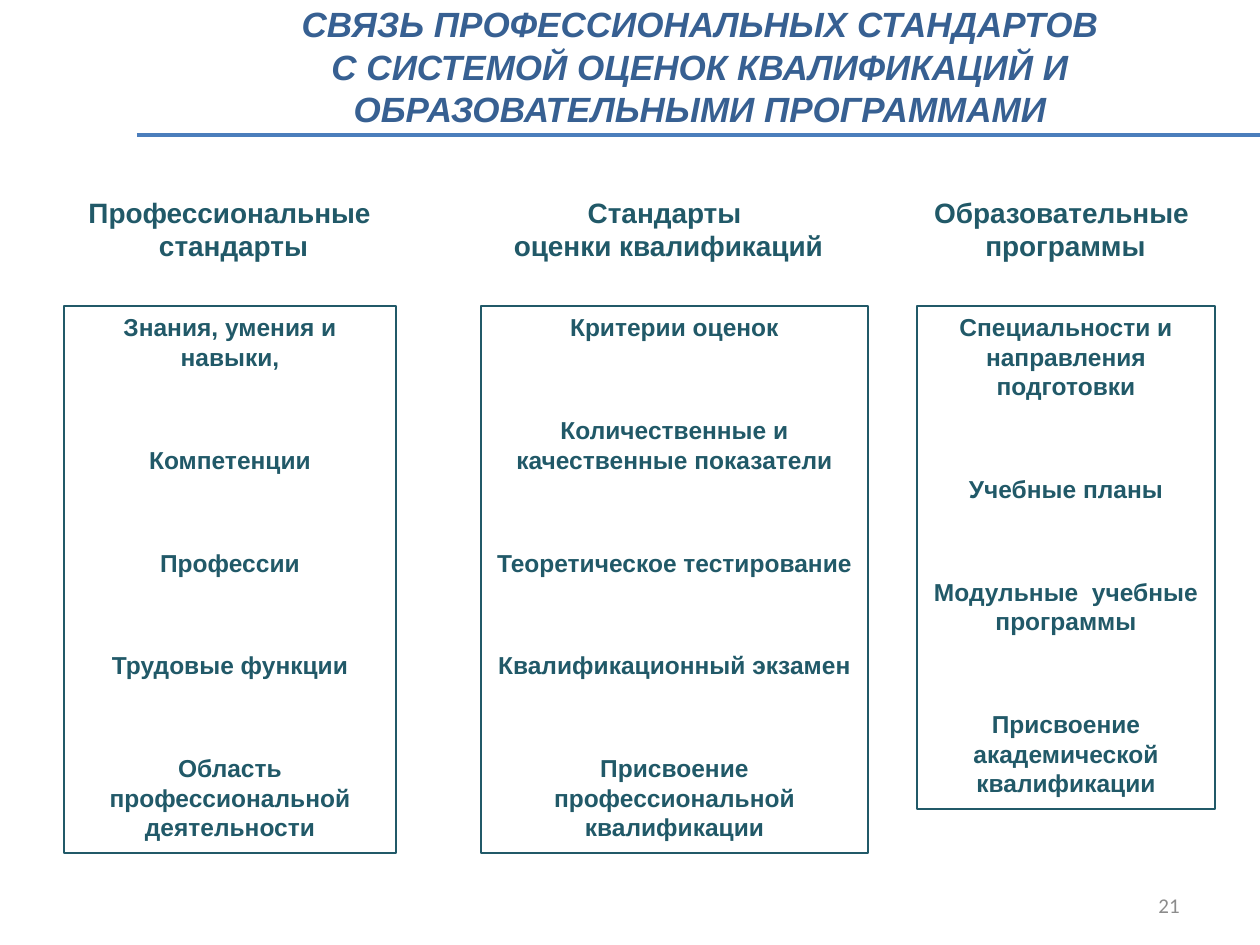
from lxml import etree
from pptx import Presentation
from pptx.dml.color import RGBColor
from pptx.enum.shapes import MSO_CONNECTOR, MSO_SHAPE
from pptx.enum.text import MSO_ANCHOR, MSO_AUTO_SIZE, PP_ALIGN
from pptx.oxml.ns import qn
from pptx.util import Pt

RECT = MSO_SHAPE.RECTANGLE
STRAIGHT = MSO_CONNECTOR.STRAIGHT
CENTER, RIGHT = PP_ALIGN.CENTER, PP_ALIGN.RIGHT
TOP, MIDDLE = MSO_ANCHOR.TOP, MSO_ANCHOR.MIDDLE
FIT_SHAPE = MSO_AUTO_SIZE.SHAPE_TO_FIT_TEXT

COLORS = {"teal": "215968", "title": "376092", "rule": "4B7EBC", "number": "8C8C8C"}
BOX_TOP = 306
HEADING_TOP, HEADING_HEIGHT = 189, 81

TITLE = [
    "СВЯЗЬ ПРОФЕССИОНАЛЬНЫХ СТАНДАРТОВ",
    "С СИСТЕМОЙ ОЦЕНОК КВАЛИФИКАЦИЙ И ОБРАЗОВАТЕЛЬНЫМИ ПРОГРАММАМИ",
]
# heading lines, heading (left, width), box (left, width, height), box items
COLUMNS = [
    (["Профессиональные ", "стандарты"], (74, 319), (64, 332, 547),
     ["Знания, умения и навыки,", "Компетенции", "Профессии", "Трудовые функции",
      "Область профессиональной деятельности"]),
    (["Стандарты ", "оценки квалификаций"], (499, 339), (481, 387, 547),
     ["Критерии оценок", "Количественные и качественные показатели",
      "Теоретическое тестирование", "Квалификационный экзамен",
      "Присвоение профессиональной квалификации"]),
    (["Образовательные ", "программы"], (920, 291), (917, 298, 503),
     ["Специальности и направления подготовки", "Учебные планы",
      "Модульные  учебные программы", "Присвоение академической квалификации"]),
]


def px(n):
    return round(n * 914400 / 126)


def rgb(name):
    return RGBColor.from_string(COLORS[name])


class Deck:
    def __init__(self, width, height):
        self.prs = Presentation()
        self.prs.slide_width, self.prs.slide_height = px(width), px(height)
        self.s = self.prs.slides.add_slide(self.prs.slide_layouts[6])

    def fill_text(self, tf, lines, size, color="teal", bold=True, italic=False,
                  font="Arial", align=CENTER, gap=0):
        """Put one paragraph per line into the text frame."""
        for i, line in enumerate(lines):
            p = tf.paragraphs[0] if i == 0 else tf.add_paragraph()
            p.text = line
            p.alignment = align
            p.space_before = Pt(gap)
            p.font.name, p.font.size = font, Pt(size)
            p.font.bold, p.font.italic = bold, italic
            p.font.color.rgb = rgb(color)

    def text(self, x, y, w, h, lines, size, wrap=True, anchor=TOP, **style):
        tf = self.s.shapes.add_textbox(px(x), px(y), px(w), px(h)).text_frame
        tf.word_wrap = wrap
        tf.vertical_anchor = anchor
        self.fill_text(tf, lines, size, **style)
        return tf

    def box(self, x, y, w, h, lines, size, gap):
        sp = self.s.shapes.add_shape(RECT, px(x), px(y), px(w), px(h))
        sp.shadow.inherit = False
        sp.fill.background()
        sp.line.color.rgb = rgb("teal")
        sp.line.width = Pt(0.75)
        tf = sp.text_frame
        tf.word_wrap = True
        tf.vertical_anchor = TOP
        tf.auto_size = FIT_SHAPE
        self.fill_text(tf, lines, size, gap=gap)

    def rule(self, x1, x2, y, color, width):
        line = self.s.shapes.add_connector(STRAIGHT, px(x1), px(y), px(x2), px(y))
        line.line.color.rgb = rgb(color)
        line.line.width = Pt(width)
        etree.SubElement(line._element.spPr, qn("a:effectLst"))


def main():
    deck = Deck(1260, 945)
    deck.text(898, 880, 294, 50, ["21"], 12, anchor=MIDDLE, color="number",
              bold=False, font="Calibri", align=RIGHT)
    for heading, (x, w), (box_x, box_w, box_h), items in COLUMNS:
        tf = deck.text(x, HEADING_TOP, w, HEADING_HEIGHT, heading, 16, wrap=False)
        tf.auto_size = FIT_SHAPE
        deck.box(box_x, BOX_TOP, box_w, box_h, items, 14, gap=42)
    title = deck.text(194, -2, 1012, 38, TITLE, 20, color="title", italic=True)
    title.margin_left = title.margin_right = px(9)
    title.margin_top = title.margin_bottom = px(5)
    deck.rule(137, 1260, 135, "rule", 2.75)
    deck.prs.save("out.pptx")


if __name__ == "__main__":
    main()
